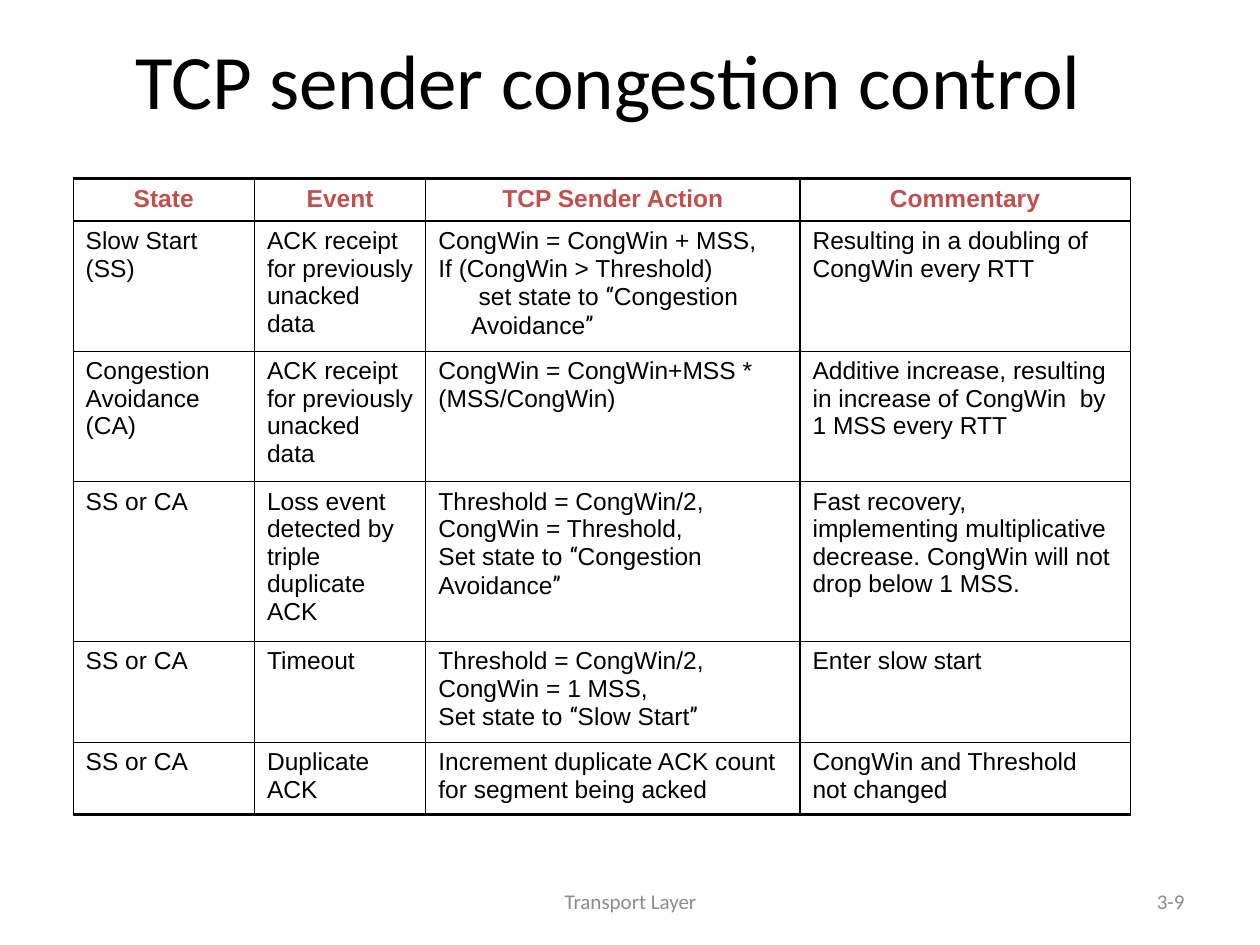
from lxml import etree
from pptx import Presentation
from pptx.dml.color import RGBColor
from pptx.enum.text import MSO_ANCHOR, PP_ALIGN
from pptx.oxml.ns import qn
from pptx.util import Inches, Pt

LEFT, MID, RIGHT = PP_ALIGN.LEFT, PP_ALIGN.CENTER, PP_ALIGN.RIGHT
MIDDLE = MSO_ANCHOR.MIDDLE
BLACK, RED, GRAY = "000000", "C0504D", "8C8C8C"
BODY, QUOTE, HEAD = "Arial", "Roboto Condensed", "Calibri"

COLS = [1.44, 1.36, 2.97, 2.62]
HEIGHTS = [0.33, 1, 0.98, 1.19, 0.78, 0.57]
STEP = "      "[:0] + "set state to “Congestion Avoidance”"
ACK = "ACK receipt for previously unacked data"

# Each cell is a list of paragraphs
ROWS = [
    [["State"], ["Event"], ["TCP Sender Action"], ["Commentary"]],
    [["Slow Start (SS)"], [ACK],
     ["CongWin = CongWin + MSS,", "If (CongWin > Threshold)", STEP],
     ["Resulting in a doubling of CongWin every RTT"]],
    [["Congestion", "Avoidance (CA)"], [ACK],
     ["CongWin = CongWin+MSS * (MSS/CongWin)"],
     ["Additive increase, resulting in increase of CongWin  by 1 MSS every RTT"]],
    [["SS or CA"], ["Loss event detected by triple duplicate ACK"],
     ["Threshold = CongWin/2,", "CongWin = Threshold,",
      "Set state to “Congestion Avoidance”"],
     ["Fast recovery, implementing multiplicative decrease. "
      "CongWin will not drop below 1 MSS."]],
    [["SS or CA"], ["Timeout"],
     ["Threshold = CongWin/2,", "CongWin = 1 MSS,", "Set state to “Slow Start”"],
     ["Enter slow start"]],
    [["SS or CA"], ["Duplicate ACK"],
     ["Increment duplicate ACK count for segment being acked"],
     ["CongWin and Threshold not changed"]],
]


def color(code):
    return RGBColor.from_string(code)


def add_run(para, text, font, size, code, bold=False):
    run = para.add_run()
    run.text = text
    run.font.name = font
    run.font.size = Pt(size)
    run.font.bold = bold
    run.font.color.rgb = color(code)


def add_label(slide, box, text, size, code, align):
    frame = slide.shapes.add_textbox(*map(Inches, box)).text_frame
    frame.word_wrap = True
    frame.vertical_anchor = MIDDLE
    para = frame.paragraphs[0]
    para.alignment = align
    add_run(para, text, HEAD, size, code)


def split_quotes(text):
    """Yield (text, font) pairs, with the quote marks set apart."""
    for mark in "“”":
        text = text.replace(mark, f"|{mark}|")
    for part in filter(None, text.split("|")):
        yield part, QUOTE if part in "“”" else BODY


def set_borders(cell, top, bottom):
    props = cell._tc.get_or_add_tcPr()
    for side, width in (("L", 0.75), ("R", 0.75), ("T", top), ("B", bottom)):
        line = etree.SubElement(props, qn(f"a:ln{side}"), w=str(Pt(width)))
        fill = etree.SubElement(line, qn("a:solidFill"))
        etree.SubElement(fill, qn("a:srgbClr"), val=BLACK)


def fill_cell(cell, lines, header):
    frame = cell.text_frame
    for i, text in enumerate(lines):
        para = frame.paragraphs[0] if i == 0 else frame.add_paragraph()
        para.alignment = MID if header else LEFT
        if text == STEP:  # nested step under the If line
            props = para._p.get_or_add_pPr()
            props.set("marL", str(Inches(0.26)))
            props.set("indent", str(Inches(0.06)))
        for part, font in split_quotes(text):
            add_run(para, part, font, 14, RED if header else BLACK, header)


def add_states(slide, box):
    table = slide.shapes.add_table(len(ROWS), len(COLS), *map(Inches, box)).table
    table.first_row = table.horz_banding = False
    for col, width in zip(table.columns, COLS):
        col.width = Inches(width)
    last = len(ROWS) - 1
    for r, cells in enumerate(ROWS):
        table.rows[r].height = Inches(HEIGHTS[r])
        for c, lines in enumerate(cells):
            cell = table.cell(r, c)
            fill_cell(cell, lines, r == 0)
            set_borders(cell, 2 if r == 0 else 1, 2 if r == last else 1)
            cell.fill.background()


def add_footer(slide, box):
    left, top, width, height = box
    add_label(slide, (left, top, 3.17, height), "Transport Layer", 12, GRAY, MID)
    add_label(slide, (left + width - 2.33, top, 2.33, height), "3-9", 12, GRAY, RIGHT)


def main():
    deck = Presentation()
    deck.slide_width, deck.slide_height = Inches(10), Inches(7.5)
    slide = deck.slides.add_slide(deck.slide_layouts[6])
    # Title
    add_label(slide, (0.58, 0, 8.5, 1.25), "TCP sender congestion control",
              44, BLACK, MID)
    # State table
    add_states(slide, (0.58, 1.42, sum(COLS), sum(HEIGHTS)))
    # Footer and page number
    add_footer(slide, (3.42, 6.95, 6.08, 0.4))
    deck.save("out.pptx")


if __name__ == "__main__":
    main()
